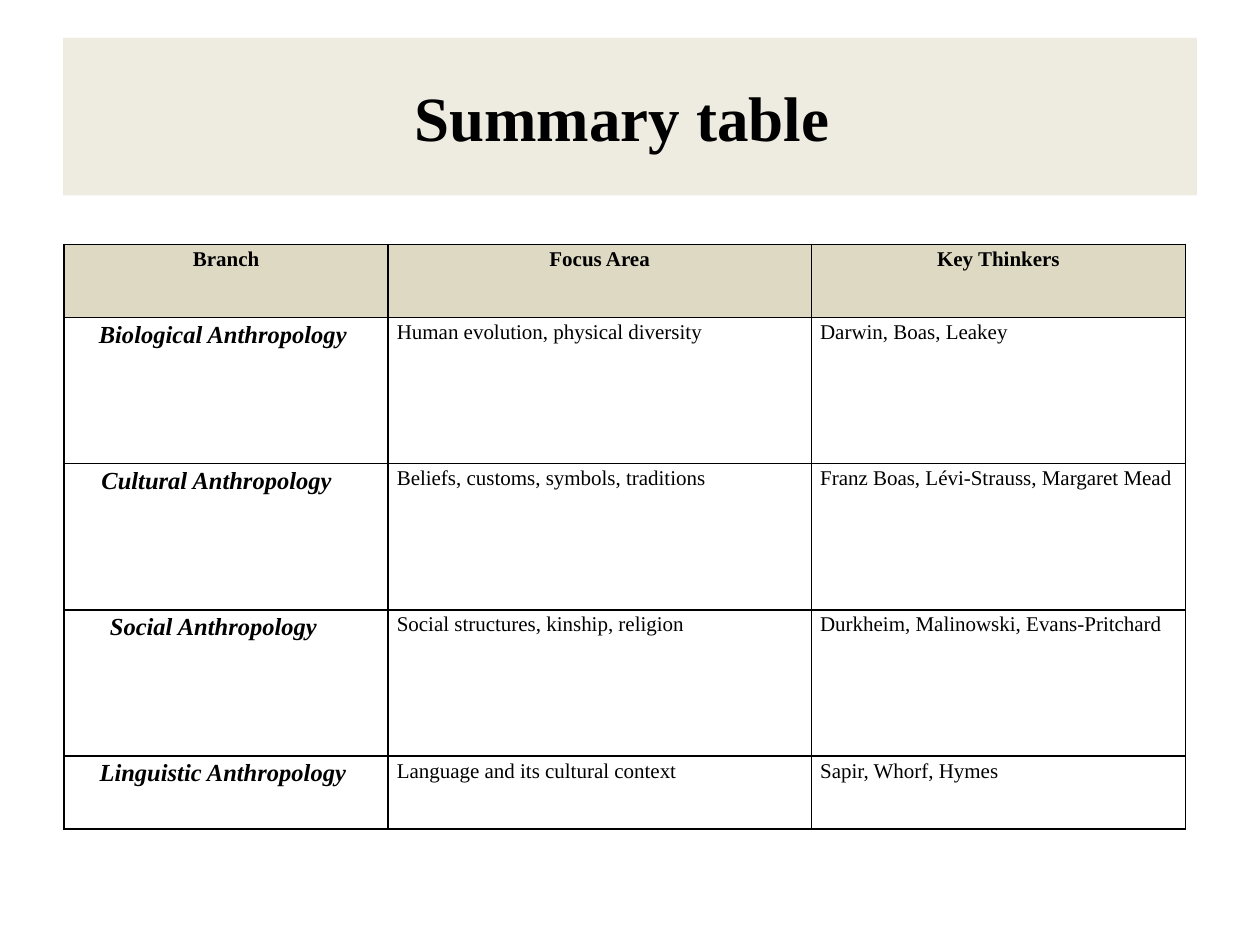
from lxml import etree
from pptx import Presentation
from pptx import util as u
from pptx.dml.color import RGBColor
from pptx.enum import text
from pptx.oxml import ns

FONT = "Times New Roman"
BLACK = "000000"
TITLE_FILL = "EEECE1"
HEADER_FILL = "DDD9C3"
SIDE_MARGIN = 0.07

COLUMN_WIDTHS = [2.57, 3.36, 2.97]
ROW_HEIGHTS = [0.58, 1.16, 1.16, 1.16, 0.58]
HEADERS = ["Branch", "Focus Area", "Key Thinkers"]
# Each branch ends with the extra right margin that shifts its name left.
BRANCHES = [
    ("Biological Anthropology", "Human evolution, physical diversity",
     "Darwin, Boas, Leakey", 0.05),
    ("Cultural Anthropology", "Beliefs, customs, symbols, traditions",
     "Franz Boas, Lévi-Strauss, Margaret Mead", 0.15),
    ("Social Anthropology", "Social structures, kinship, religion",
     "Durkheim, Malinowski, Evans-Pritchard", 0.2),
    ("Linguistic Anthropology", "Language and its cultural context",
     "Sapir, Whorf, Hymes", 0.05),
]


def color(value):
    return RGBColor.from_string(value)


def add_run(paragraph, words, size, bold=False, italic=False):
    run = paragraph.add_run()
    run.text = words
    run.font.name = FONT
    run.font.size = u.Pt(size)
    run.font.bold = bold
    run.font.italic = italic
    run.font.color.rgb = color(BLACK)


def add_title(slide, words):
    title = slide.shapes.title
    title.left, title.top = u.Inches(0.5), u.Inches(0.3)
    title.width, title.height = u.Inches(9), u.Inches(1.25)
    title.fill.solid()
    title.fill.fore_color.rgb = color(TITLE_FILL)
    frame = title.text_frame
    frame.vertical_anchor = text.MSO_ANCHOR.MIDDLE
    frame.margin_right = u.Inches(0.23)
    paragraph = frame.paragraphs[0]
    paragraph.alignment = text.PP_ALIGN.CENTER
    add_run(paragraph, words, 36, bold=True)


def add_borders(cell):
    """Draw all four sides; call before filling, as lines precede the fill."""
    properties = cell._tc.get_or_add_tcPr()
    for side in ("a:lnL", "a:lnR", "a:lnT", "a:lnB"):
        line = etree.SubElement(properties, ns.qn(side), w=str(u.Pt(1)))
        fill = etree.SubElement(line, ns.qn("a:solidFill"))
        etree.SubElement(fill, ns.qn("a:srgbClr"), val=BLACK)


def fill_cell(cell, words, size=12, bold=False, italic=False,
              centred=False, fill=None, extra_margin=0):
    add_borders(cell)
    if fill:
        cell.fill.solid()
        cell.fill.fore_color.rgb = color(fill)
    else:
        cell.fill.background()
    cell.margin_left = u.Inches(SIDE_MARGIN)
    cell.margin_right = u.Inches(SIDE_MARGIN + extra_margin)
    cell.margin_top = cell.margin_bottom = 0
    paragraph = cell.text_frame.paragraphs[0]
    paragraph.line_spacing = 1.15
    paragraph.alignment = (text.PP_ALIGN.CENTER if centred
                           else text.PP_ALIGN.LEFT)
    add_run(paragraph, words, size, bold, italic)


def add_summary_table(slide):
    frame = slide.shapes.add_table(
        len(ROW_HEIGHTS), len(COLUMN_WIDTHS), u.Inches(0.51), u.Inches(1.94),
        u.Inches(sum(COLUMN_WIDTHS)), u.Inches(sum(ROW_HEIGHTS)))
    table = frame.table
    table.first_row = table.horz_banding = False
    for column, width in zip(table.columns, COLUMN_WIDTHS):
        column.width = u.Inches(width)
    for row, height in zip(table.rows, ROW_HEIGHTS):
        row.height = u.Inches(height)

    for index, header in enumerate(HEADERS):
        fill_cell(table.cell(0, index), header, bold=True, centred=True,
                  fill=HEADER_FILL)
    for index, (branch, focus, thinkers, shift) in enumerate(BRANCHES, 1):
        fill_cell(table.cell(index, 0), branch, size=14, bold=True,
                  italic=True, centred=True, extra_margin=shift)
        fill_cell(table.cell(index, 1), focus)
        fill_cell(table.cell(index, 2), thinkers)


def main():
    presentation = Presentation()
    presentation.slide_width = u.Inches(10)
    presentation.slide_height = u.Inches(7.5)
    title_only = presentation.slide_layouts[5]
    slide = presentation.slides.add_slide(title_only)
    add_title(slide, "Summary table")
    add_summary_table(slide)
    presentation.save("out.pptx")


if __name__ == "__main__":
    main()
